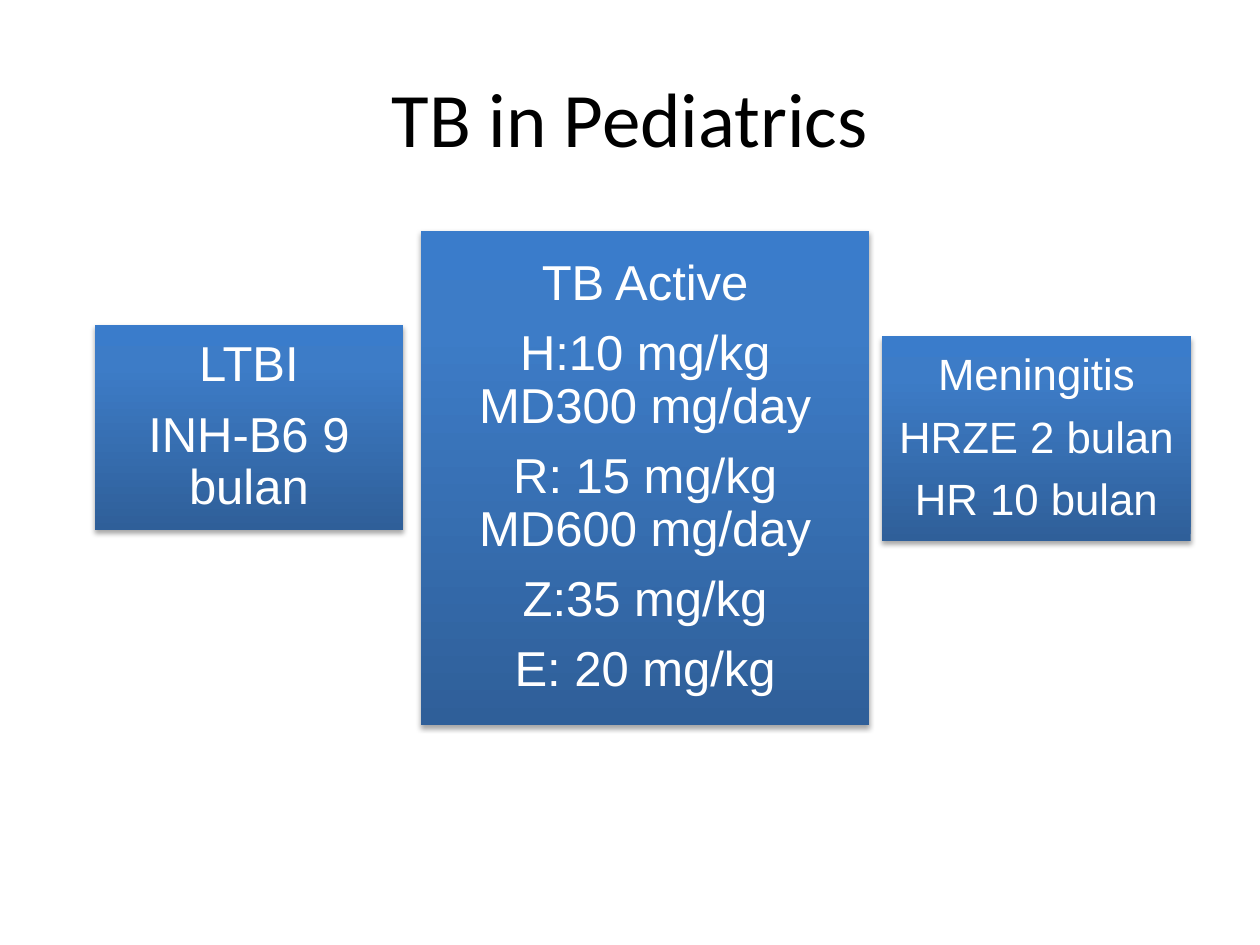
from dataclasses import dataclass
from pptx import Presentation
from pptx.dml.color import RGBColor as Rgb
from pptx.enum.shapes import MSO_SHAPE as Form
from pptx.enum.text import MSO_ANCHOR as Anchor, PP_ALIGN as Align
from pptx.oxml import parse_xml as to_xml
from pptx.oxml.ns import nsdecls, qn
from pptx.util import Inches, Pt


@dataclass(frozen=True)
class Theme:
    head: str = "Calibri"
    body: str = "Arial"
    ink: str = "000000"
    pale: str = "FFFFFF"
    fade: tuple = ((0, "2F5F99"), (80, "3D7CC7"), (100, "3A7CCB"))
    big: int = 44
    mid: int = 28
    small: int = 25
    lead: float = 0.9
    gap: float = 0.35


THEME = Theme()
WIDE, HIGH = Inches(10), Inches(7.5)
SIDE = (0.245, 0.217)
CARDS = [
    ((0.075, 0.344, *SIDE), THEME.mid, 0.12, ["LTBI", "INH-B6 9 bulan"]),
    ((0.334, 0.244, 0.356, 0.523), THEME.mid, 0.12,
     ["TB Active", "H:10 mg/kg MD300 mg/day", "R: 15 mg/kg MD600 mg/day",
      "Z:35 mg/kg", "E: 20 mg/kg"]),
    ((0.7, 0.356, *SIDE), THEME.small, 0.1,
     ["Meningitis", "HRZE 2 bulan", "HR 10 bulan"]),
]


def scale(box):
    return [round(part * full) for part, full in zip(box, (WIDE, HIGH) * 2)]


def add_run(para, text, size, font, color):
    run = para.add_run()
    run.text = text
    run.font.size = Pt(size)
    run.font.name = font
    run.font.color.rgb = Rgb.from_string(color)
    para.alignment = Align.CENTER


def shade(shape):
    stops = "".join(
        f'<a:gs pos="{pos * 1000}"><a:srgbClr val="{color}"/></a:gs>'
        for pos, color in THEME.fade)
    shape.fill.background()
    old = shape._element.spPr.find(qn("a:noFill"))
    old.getparent().replace(old, to_xml(
        f'<a:gradFill {nsdecls("a")} rotWithShape="1"><a:gsLst>{stops}</a:gsLst>'
        '<a:lin ang="16200000" scaled="0"/></a:gradFill>'))
    shape.line.fill.background()
    shape.shadow.inherit = False
    shape._element.spPr.find(qn("a:effectLst")).append(to_xml(
        f'<a:outerShdw {nsdecls("a")} blurRad="{Pt(3.1)}" dist="{Pt(1.8)}" '
        'dir="5400000" rotWithShape="0"><a:srgbClr val="000000">'
        '<a:alpha val="35000"/></a:srgbClr></a:outerShdw>'))


def put_title(slide, box, text):
    title = slide.shapes.title
    title.left, title.top, title.width, title.height = scale(box)
    frame = title.text_frame
    frame.vertical_anchor = Anchor.MIDDLE
    add_run(frame.paragraphs[0], text, THEME.big, THEME.head, THEME.ink)


def put_card(slide, box, size, inset, lines):
    card = slide.shapes.add_shape(Form.RECTANGLE, *scale(box))
    shade(card)
    frame = card.text_frame
    frame.word_wrap = True
    frame.vertical_anchor = Anchor.MIDDLE
    frame.margin_left = frame.margin_right = Inches(inset)
    frame.margin_top = frame.margin_bottom = Inches(inset)
    for row, line in enumerate(lines):
        para = frame.add_paragraph() if row else frame.paragraphs[0]
        para.line_spacing = THEME.lead
        para.space_after = Pt(size * THEME.gap)
        add_run(para, line, size, THEME.body, THEME.pale)


def main():
    deck = Presentation()
    deck.slide_width, deck.slide_height = WIDE, HIGH
    slide = deck.slides.add_slide(deck.slide_layouts[5])
    put_title(slide, (0.05, 0.04, 0.9, 0.167), "TB in Pediatrics")
    for card in CARDS:
        put_card(slide, *card)
    deck.save("out.pptx")


if __name__ == "__main__":
    main()
